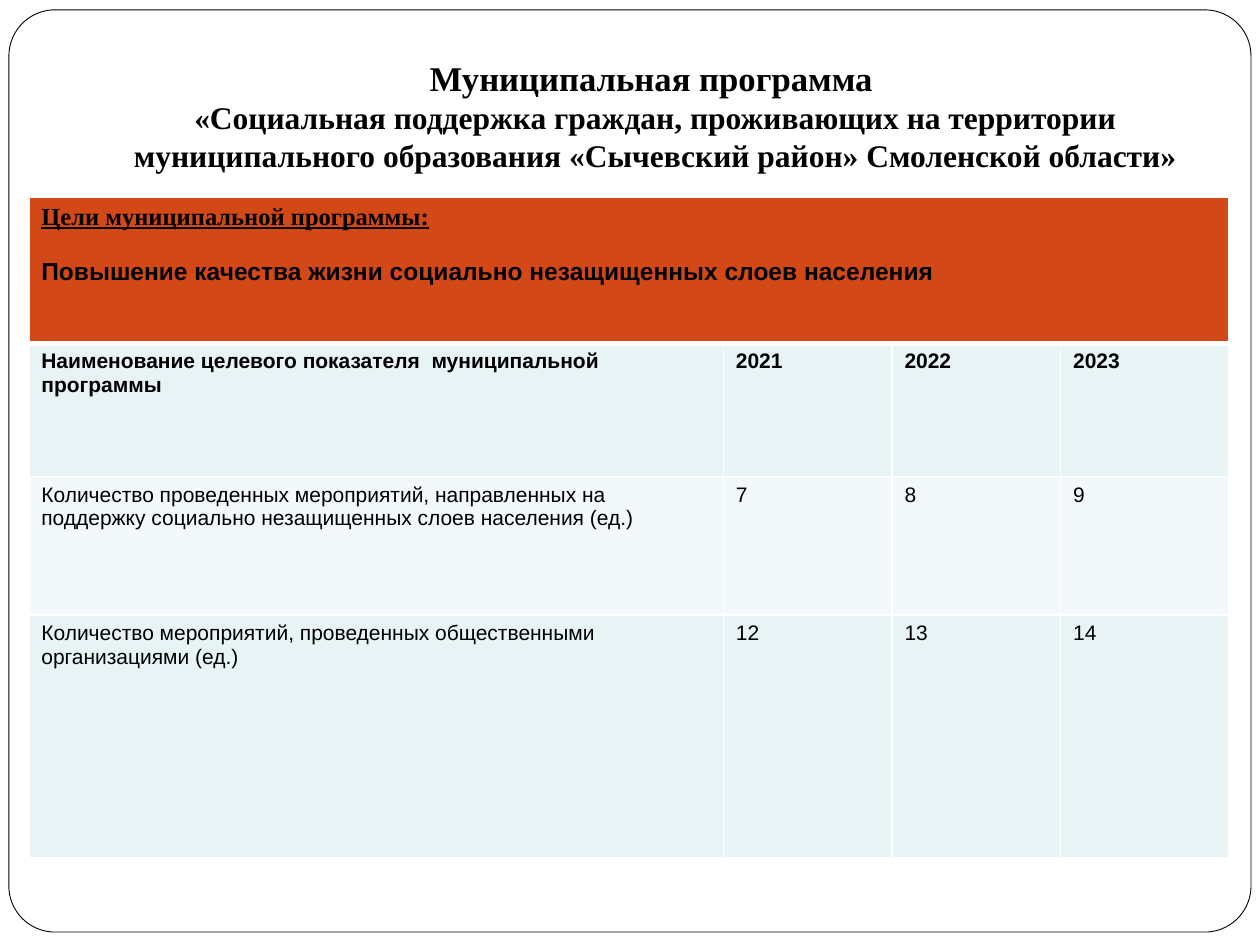
from dataclasses import dataclass

from lxml.etree import SubElement as Sub
from pptx import Presentation as Deck
from pptx.dml.color import RGBColor as Rgb
from pptx.enum.shapes import MSO_SHAPE as Form
from pptx.enum.text import MSO_ANCHOR as Anchor, MSO_AUTO_SIZE as Auto, PP_ALIGN as Align
from pptx.oxml.ns import qn
from pptx.util import Cm, Pt


@dataclass(frozen=True)
class Theme:
    ink: str = "000000"
    white: str = "FFFFFF"
    accent: str = "D34817"
    band: str = "E7F3F4"
    pale: str = "F3F9FA"
    serif: str = "Times New Roman"
    sans: str = "Arial"
    head: float = 19.8
    sub: float = 18
    goal: float = 14
    body: float = 12
    thin: float = 1
    thick: float = 3


class Page:
    def __init__(self, slide, theme):
        self.slide = slide
        self.theme = theme

    def run(self, para, text, size, font, bold=False, under=False):
        run = para.add_run()
        run.text = text
        face = run.font
        face.size, face.name = Pt(size), font
        face.bold, face.underline = bold, under
        face.color.rgb = Rgb.from_string(self.theme.ink)

    def title(self, lines, left, top, width, height):
        box = self.slide.shapes.title
        box.left, box.top, box.width, box.height = map(Cm, (left, top, width, height))
        frame = box.text_frame
        frame.word_wrap = True
        frame.auto_size = Auto.NONE
        frame.vertical_anchor = Anchor.BOTTOM
        frame.margin_left = frame.margin_right = frame.margin_bottom = Cm(0.25)
        frame.margin_top = Cm(0.13)
        para = frame.paragraphs[0]
        para.alignment = Align.CENTER
        for i, (text, size) in enumerate(lines):
            if i:
                para.add_line_break()
            self.run(para, text, size, self.theme.serif, bold=True)

    def border(self, left, top, width, height, curve):
        shape = self.slide.shapes.add_shape(
            Form.ROUNDED_RECTANGLE, *map(Cm, (left, top, width, height)))
        shape.adjustments[0] = curve
        shape.shadow.inherit = False
        shape.fill.solid()
        shape.fill.fore_color.rgb = Rgb.from_string(self.theme.white)
        shape.line.color.rgb = Rgb.from_string(self.theme.ink)
        shape.line.width = Pt(0.5)
        self.slide.shapes.title.element.addprevious(shape.element)

    def edges(self, cell, top, bottom):
        props = cell._tc.get_or_add_tcPr()
        thin = self.theme.thin
        sides = {"L": thin, "R": thin, "T": top, "B": bottom}
        for i, (side, width) in enumerate(sides.items()):
            line = Sub(props, qn(f"a:ln{side}"), w=str(Pt(width)))
            Sub(Sub(line, qn("a:solidFill")), qn("a:srgbClr"), val=self.theme.white)
            props.insert(i, line)

    def table(self, left, top, cols, rows, fills):
        shape = self.slide.shapes.add_table(
            len(rows), len(cols), *map(Cm, (left, top, sum(cols), sum(rows))))
        grid = shape.table
        grid.first_row = grid.horz_banding = False
        for col, width in zip(grid.columns, cols):
            col.width = Cm(width)
        for row, height in zip(grid.rows, rows):
            row.height = Cm(height)
        thin, thick = self.theme.thin, self.theme.thick
        for r, fill in enumerate(fills):
            for c in range(len(cols)):
                cell = grid.cell(r, c)
                cell.fill.solid()
                cell.fill.fore_color.rgb = Rgb.from_string(fill)
                self.edges(cell, thick if r == 1 else thin, thick if r == 0 else thin)
        return grid

    def goal(self, grid, label, text):
        cell = grid.cell(0, 0)
        cell.merge(grid.cell(0, len(grid.columns) - 1))
        frame = cell.text_frame
        size = self.theme.goal
        self.run(frame.paragraphs[0], label, size, self.theme.serif, True, True)
        para = frame.add_paragraph()
        para.space_before = Pt(16)
        self.run(para, text, size, self.theme.sans, True)

    def data(self, grid, rows):
        for r, row in enumerate(rows, 1):
            for c, text in enumerate(row):
                para = grid.cell(r, c).text_frame.paragraphs[0]
                self.run(para, text, self.theme.body, self.theme.sans, r == 1)


def main():
    theme = Theme()
    deck = Deck()
    deck.slide_width, deck.slide_height = Cm(25.4), Cm(19.05)
    page = Page(deck.slides.add_slide(deck.slide_layouts[5]), theme)
    page.border(0.18, 0.2, 25.04, 18.59, 0.05)
    page.title([
        ("Муниципальная программа ", theme.head),
        ("«Социальная поддержка граждан, проживающих на территории", theme.sub),
        ("муниципального образования «Сычевский район» Смоленской области»", theme.sub),
    ], 1.4, 0.58, 23.62, 3.18)
    grid = page.table(0.58, 3.97, [14] + [3.4] * 3, [2.95, 2.69, 2.79, 4.9],
                      [theme.accent, theme.band, theme.pale, theme.band])
    page.goal(grid, "Цели муниципальной программы:",
              "Повышение качества жизни социально незащищенных слоев населения")
    page.data(grid, [
        ("Наименование целевого показателя  муниципальной программы",
         "2021", "2022", "2023"),
        ("Количество проведенных мероприятий, направленных на поддержку "
         "социально незащищенных слоев населения (ед.)", "7", "8", "9"),
        ("Количество мероприятий, проведенных общественными организациями (ед.)",
         "12", "13", "14"),
    ])
    deck.save("out.pptx")


if __name__ == "__main__":
    main()
